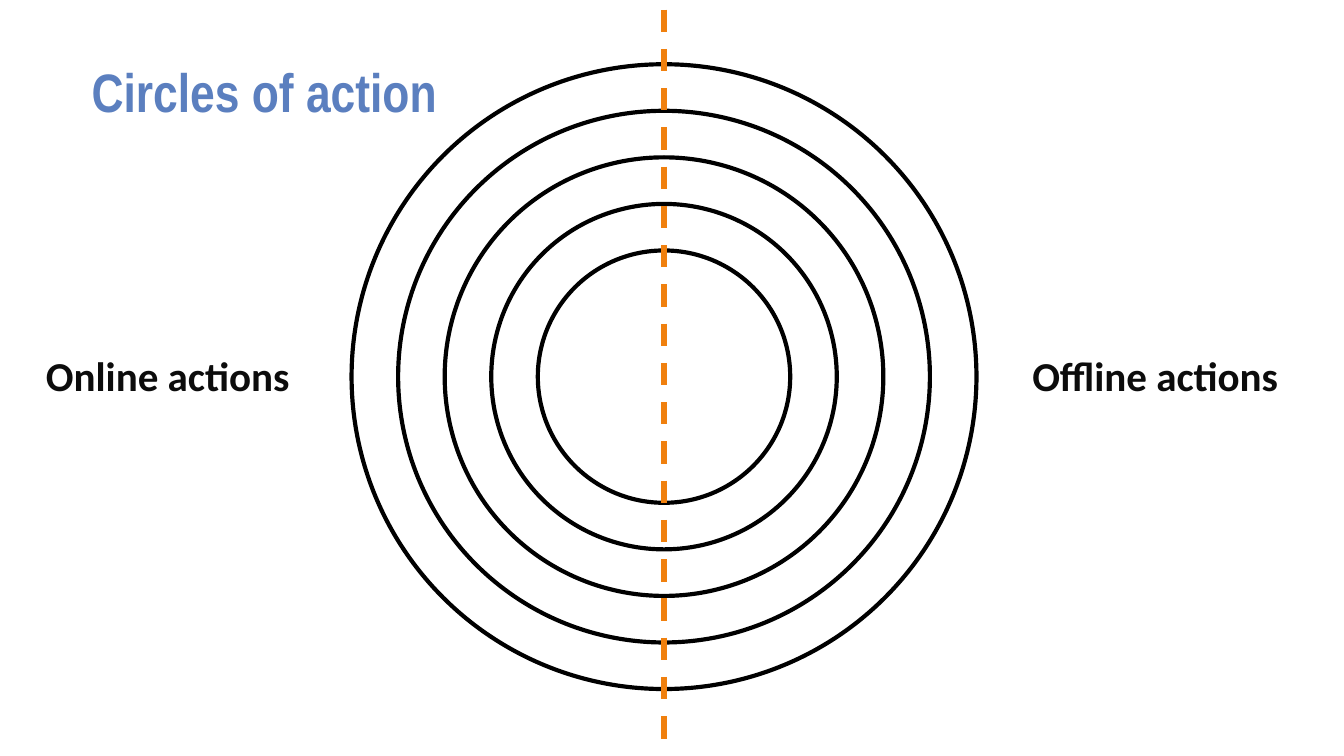
import pptx
import pptx.dml.color
import pptx.enum.dml
import pptx.enum.shapes
import pptx.enum.text
import pptx.oxml
import pptx.util
from pptx.util import Cm

BLUE = pptx.dml.color.RGBColor(0x5B, 0x7F, 0xBF)
ORANGE = pptx.dml.color.RGBColor(0xF0, 0x80, 0x0E)
BLACK = pptx.dml.color.RGBColor(0x00, 0x00, 0x00)
INK = pptx.dml.color.RGBColor(0x0C, 0x0C, 0x0C)


class SlideBuilder:
    title_font = "Arial Narrow"
    label_font = "Calibri"

    def __init__(self, slide):
        self.slide = slide

    def format_text(self, shape, text, font_name, size, color):
        frame = shape.text_frame
        frame.text = text
        frame.word_wrap = True
        frame.auto_size = pptx.enum.text.MSO_AUTO_SIZE.NONE
        frame.vertical_anchor = pptx.enum.text.MSO_ANCHOR.MIDDLE
        frame.margin_left = frame.margin_right = Cm(0.18)
        frame.margin_top = frame.margin_bottom = Cm(0.1)
        paragraph = frame.paragraphs[0]
        paragraph.alignment = pptx.enum.text.PP_ALIGN.LEFT
        paragraph.line_spacing = 0.9
        paragraph.font.name = font_name
        paragraph.font.size = pptx.util.Pt(size)
        paragraph.font.bold = True
        paragraph.font.color.rgb = color

    def title(self, text, left, top, width, height):
        shape = self.slide.shapes.title
        shape.left, shape.top = Cm(left), Cm(top)
        shape.width, shape.height = Cm(width), Cm(height)
        self.format_text(shape, text, self.title_font, 29, BLUE)

    def label(self, text, left, top, width, height):
        shape = self.slide.shapes.add_textbox(Cm(left), Cm(top), Cm(width), Cm(height))
        self.format_text(shape, text, self.label_font, 22, INK)

    def circle(self, center_x, center_y, diameter):
        shape = self.slide.shapes.add_shape(
            pptx.enum.shapes.MSO_SHAPE.OVAL,
            Cm(center_x - diameter / 2), Cm(center_y - diameter / 2),
            Cm(diameter), Cm(diameter))
        shape.shadow.inherit = False
        shape.fill.background()
        shape.line.color.rgb = BLACK
        shape.line.width = pptx.util.Pt(2.25)

    def dashed_line(self, x, top, bottom):
        connector = self.slide.shapes.add_connector(
            pptx.enum.shapes.MSO_CONNECTOR.STRAIGHT, Cm(x), Cm(top), Cm(x), Cm(bottom))
        connector.line.color.rgb = ORANGE
        connector.line.width = pptx.util.Pt(3)
        connector.line.dash_style = pptx.enum.dml.MSO_LINE.DASH
        properties = connector._element.spPr
        properties.append(pptx.oxml.parse_xml(
            '<a:effectLst xmlns:a="http://schemas.openxmlformats.org/drawingml/2006/main"/>'))


def main():
    presentation = pptx.Presentation()
    presentation.slide_width, presentation.slide_height = Cm(25.4), Cm(14.29)
    slide = presentation.slides.add_slide(presentation.slide_layouts[5])
    builder = SlideBuilder(slide)

    builder.title("Circles of action", 1.55, 0.94, 22.28, 1.7)

    # Concentric circles, from the outermost inwards
    center_x, center_y = 12.55, 7.12
    for ring in range(5):
        builder.circle(center_x, center_y, 11.81 - 1.76 * ring)

    # Divider between online and offline
    builder.dashed_line(center_x, 0.18, 14.07)

    # Side labels
    for text, left in (("Online actions", 0.69), ("Offline actions", 19.33)):
        builder.label(text, left, 5.79, 5.08, 2.72)

    presentation.save("out.pptx")


if __name__ == "__main__":
    main()
